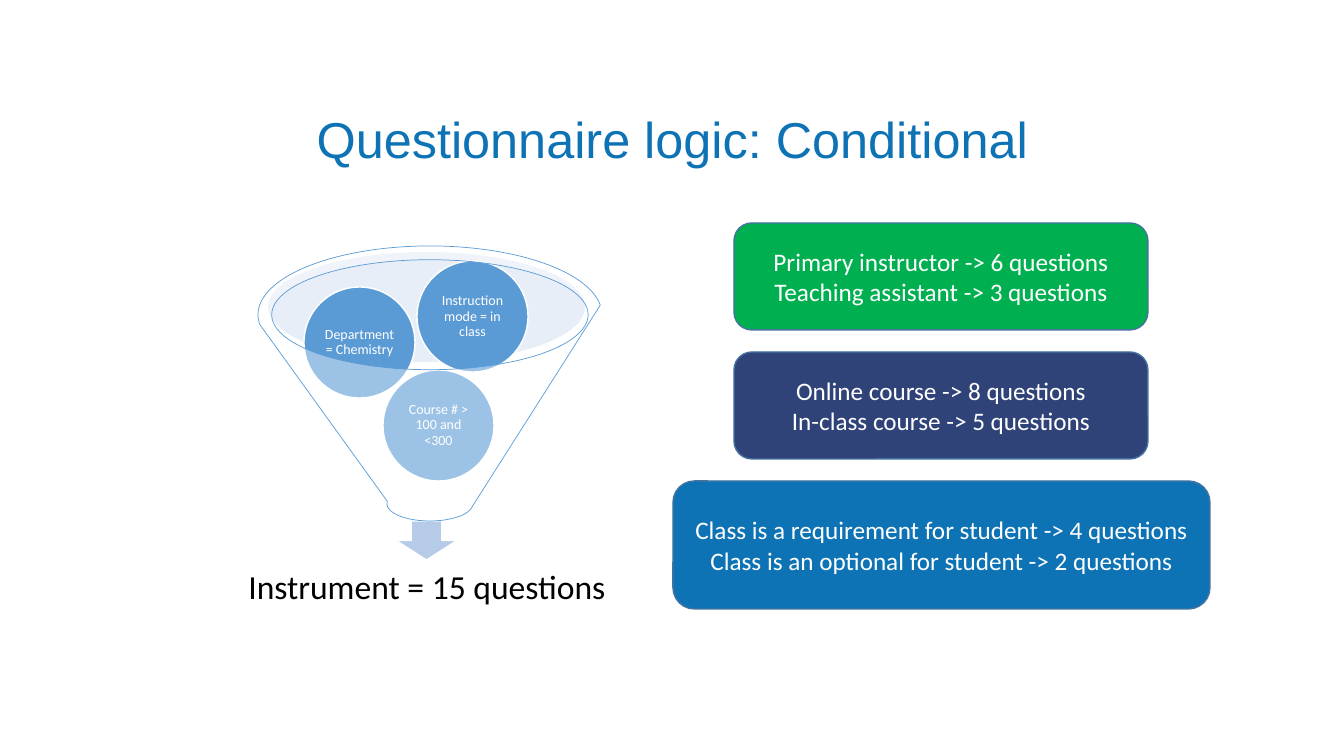
"""Build the slide on conditional questionnaire logic."""
from dataclasses import dataclass

from lxml import etree
from pptx import Presentation
from pptx import util as u
from pptx.dml.color import RGBColor
from pptx.enum import shapes, text
from pptx.oxml.ns import qn

PX_PER_INCH = 100.8


@dataclass(frozen=True)
class Theme:
    """Colours, fonts and type sizes of the slide."""
    blue: str = "0D73B5"
    green: str = "00B050"
    navy: str = "2F4378"
    ball: str = "5B9BD5"
    arrow: str = "B5CBE7"
    rim: str = "C4D5EB"
    box_line: str = "43739E"
    white: str = "FFFFFF"
    black: str = "000000"
    heading_font: str = "Arial"
    body_font: str = "Calibri"
    title_size: int = 36
    result_size: int = 24
    rule_size: int = 18
    ball_size: int = 10


THEME = Theme()


def px(length):
    """Turn pixels into EMU."""
    return u.Inches(length / PX_PER_INCH)


def colour(value):
    """Turn a hex string into a colour."""
    return RGBColor.from_string(value)


def write(shape, lines, size, ink, font=THEME.body_font, inset=(10, 5), spacing=1.0):
    """Write centred lines into a shape, one paragraph each."""
    frame = shape.text_frame
    frame.word_wrap = True
    frame.vertical_anchor = text.MSO_ANCHOR.MIDDLE
    frame.margin_left = frame.margin_right = px(inset[0])
    frame.margin_top = frame.margin_bottom = px(inset[1])
    for index, line in enumerate(lines):
        paragraph = frame.add_paragraph() if index else frame.paragraphs[0]
        paragraph.alignment = text.PP_ALIGN.CENTER
        paragraph.line_spacing = spacing
        run = paragraph.add_run()
        run.text = line
        run.font.size = u.Pt(size)
        run.font.name = font
        run.font.color.rgb = colour(ink)


def add_label(slide, area, line, size, ink, font):
    """Add a one-line centred text box."""
    label = slide.shapes.add_textbox(*map(px, area))
    write(label, [line], size, ink, font, spacing=0.9)


def add_figure(slide, kind, area, fill, line=None, width=1, opacity=100):
    """Add a flat preset shape, see-through when opacity is below 100."""
    shape = slide.shapes.add_shape(kind, *map(px, area))
    shape.shadow.inherit = False
    shape.fill.solid()
    shape.fill.fore_color.rgb = colour(fill)
    if opacity < 100:
        solid = shape.fill._xPr.find(qn("a:solidFill"))
        etree.SubElement(solid[0], qn("a:alpha"), val=str(opacity * 1000))
    if line:
        shape.line.color.rgb = colour(line)
        shape.line.width = u.Pt(width)
    else:
        shape.line.fill.background()
    return shape


def add_funnel(slide):
    """Add the funnel with its three conditions and the arrow below."""
    preset = shapes.MSO_SHAPE
    add_figure(slide, preset.OVAL, (268, 252, 317, 110), THEME.rim, opacity=40)
    add_figure(slide, preset.DOWN_ARROW, (396, 521, 61, 39), THEME.arrow, THEME.white)
    conditions = [
        (383, 370, "Course # > 100 and <300"),
        (304, 287, "Department = Chemistry"),
        (417, 261, "Instruction mode = in class"),
    ]
    for left, top, condition in conditions:
        ball = add_figure(slide, preset.OVAL, (left, top, 111, 111), THEME.ball, THEME.white)
        write(ball, [condition], THEME.ball_size, THEME.white, inset=(1, 1), spacing=0.9)
    add_figure(slide, preset.FUNNEL, (258, 246, 344, 275), THEME.white,
               THEME.ball, width=0.5, opacity=40)


def add_rules(slide):
    """Add the column of rule boxes at an equal step."""
    rules = [
        (414, 107, THEME.green,
         ["Primary instructor -> 6 questions", "Teaching assistant -> 3 questions"]),
        (414, 107, THEME.navy,
         ["Online course -> 8 questions", "In-class course -> 5 questions"]),
        (537, 128, THEME.blue,
         ["Class is a requirement for student -> 4 questions",
          "Class is an optional for student -> 2 questions"]),
    ]
    centre, first_top, step = 941, 223, 129
    for index, (width, height, fill, lines) in enumerate(rules):
        area = (centre - width // 2, first_top + index * step, width, height)
        box = add_figure(slide, shapes.MSO_SHAPE.ROUNDED_RECTANGLE, area, fill, THEME.box_line)
        write(box, lines, THEME.rule_size, THEME.white)


def main():
    """Build and save the presentation."""
    presentation = Presentation()
    presentation.slide_width, presentation.slide_height = px(1344), px(756)
    slide = presentation.slides.add_slide(presentation.slide_layouts[6])
    add_label(slide, (111, 84, 1123, 117), "Questionnaire logic: Conditional",
              THEME.title_size, THEME.blue, THEME.heading_font)
    add_funnel(slide)
    add_label(slide, (190, 552, 474, 74), "Instrument = 15 questions",
              THEME.result_size, THEME.black, THEME.body_font)
    add_rules(slide)
    presentation.save("out.pptx")


if __name__ == "__main__":
    main()
